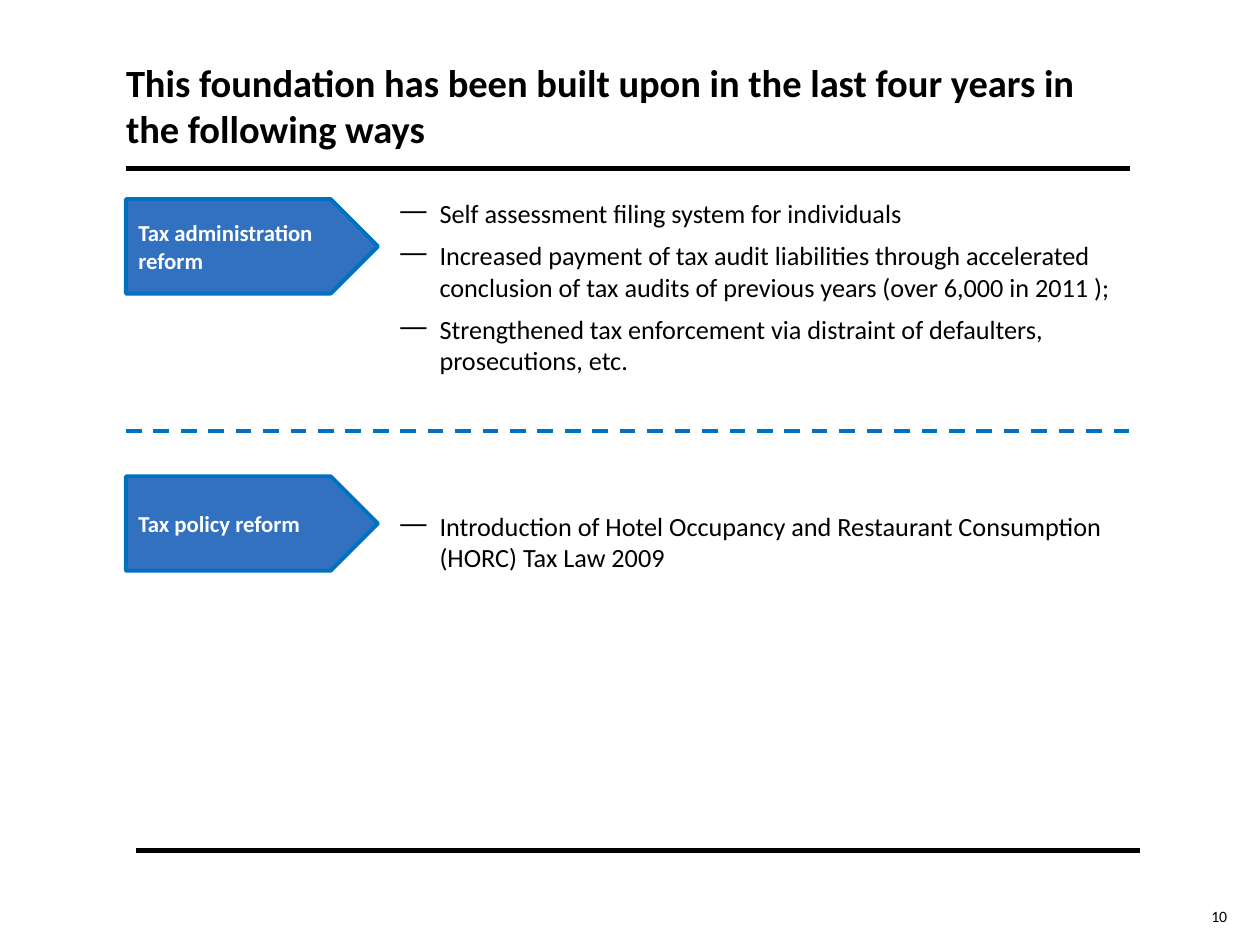
from dataclasses import dataclass

from lxml.etree import SubElement
from pptx import Presentation
from pptx.dml.color import RGBColor
from pptx.enum.dml import MSO_LINE_DASH_STYLE as Dash
from pptx.enum.shapes import MSO_CONNECTOR as Connector, MSO_SHAPE as Shape
from pptx.enum.text import MSO_ANCHOR as Anchor, MSO_AUTO_SIZE as AutoSize, PP_ALIGN as Align
from pptx.oxml.ns import qn
from pptx.util import Inches, Pt


@dataclass(frozen=True)
class Theme:
    font: str = "Calibri"
    ink: str = "000000"
    paper: str = "FFFFFF"
    tag_fill: str = "3270C0"
    accent: str = "0070C0"
    title_size: float = 22
    body_size: float = 15
    tag_size: float = 13
    number_size: float = 9
    rule_width: float = 3
    accent_width: float = 2.25


THEME = Theme()
TITLE = "This foundation has been built upon in the last four years in the following ways"
PAGE_NUMBER = "10"

# label, tag top, points top, points height, points
REFORMS = [
    ("Tax administration reform", 1.58, 1.52, 1.53, [
        "Self assessment filing system for individuals",
        "Increased payment of tax audit liabilities through accelerated "
        "conclusion of tax audits of previous years (over 6,000 in 2011 );",
        "Strengthened tax enforcement via distraint of defaulters, prosecutions, etc.",
    ]),
    ("Tax policy reform", 3.78, 4, 0.61, [
        "Introduction of Hotel Occupancy and Restaurant Consumption (HORC) Tax Law 2009",
    ]),
]

SLIDE_W, SLIDE_H = 10, 7.5
LEFT, CONTENT_W = 1, 7.97
TAG_W, TAG_H = 2, 0.75
POINTS_LEFT, POINTS_W = 2.83, 6.25
POINT_INDENT, DASH_HANG = 0.56, 0.31

# left, top, length, colour, width, dash
RULES = [
    (LEFT, 1.34, CONTENT_W, THEME.ink, THEME.rule_width, None),
    (LEFT + 0.08, 6.75, CONTENT_W, THEME.ink, THEME.rule_width, None),
    (LEFT, 3.42, 8, THEME.accent, THEME.accent_width, Dash.DASH),
]


def color(code):
    return RGBColor.from_string(code)


def box(*lengths):
    return [Inches(length) for length in lengths]


def write(paragraph, text, size, ink=THEME.ink, bold=False, align=Align.LEFT):
    paragraph.alignment = align
    run = paragraph.add_run()
    run.text = text
    run.font.name = THEME.font
    run.font.size = Pt(size)
    run.font.bold = bold
    run.font.color.rgb = color(ink)


def clear_margins(frame):
    frame.margin_left = frame.margin_right = frame.margin_top = frame.margin_bottom = 0


def add_title(slide):
    title = slide.shapes.title
    title.left, title.top, title.width, title.height = box(LEFT, 0.25, CONTENT_W, 0.95)
    frame = title.text_frame
    clear_margins(frame)
    frame.auto_size = AutoSize.NONE
    frame.vertical_anchor = Anchor.BOTTOM
    write(frame.paragraphs[0], TITLE, THEME.title_size, bold=True)


def add_rule(slide, left, top, length, ink, width, dash):
    rule = slide.shapes.add_connector(
        Connector.STRAIGHT, *box(left, top, left + length, top))
    rule.line.color.rgb = color(ink)
    rule.line.width = Pt(width)
    if dash:
        rule.line.dash_style = dash
    SubElement(rule._element.spPr, qn("a:effectLst"))


def add_tag(slide, label, top):
    tag = slide.shapes.add_shape(Shape.PENTAGON, *box(LEFT, top, TAG_W, TAG_H))
    tag.shadow.inherit = False
    tag.fill.solid()
    tag.fill.fore_color.rgb = color(THEME.tag_fill)
    tag.line.color.rgb = color(THEME.accent)
    tag.line.width = Pt(THEME.accent_width)
    frame = tag.text_frame
    frame.word_wrap = True
    frame.vertical_anchor = Anchor.MIDDLE
    write(frame.paragraphs[0], label, THEME.tag_size, THEME.paper, bold=True)


def hang_dash(paragraph):
    """Give the paragraph a dash bullet with a hanging indent."""
    properties = paragraph._p.get_or_add_pPr()
    properties.set("marL", str(Inches(POINT_INDENT)))
    properties.set("indent", str(-Inches(DASH_HANG)))
    SubElement(properties, qn("a:buChar"), char="—")


def add_points(slide, points, top, height):
    frame = slide.shapes.add_textbox(*box(POINTS_LEFT, top, POINTS_W, height)).text_frame
    frame.word_wrap = True
    for index, point in enumerate(points):
        paragraph = frame.add_paragraph() if index else frame.paragraphs[0]
        hang_dash(paragraph)
        if index:
            paragraph.space_before = Pt(3)
        paragraph.space_after = Pt(3)
        write(paragraph, point, THEME.body_size)


def add_page_number(slide):
    frame = slide.shapes.add_textbox(*box(9.59, 7.2, 0.15, 0.15)).text_frame
    clear_margins(frame)
    frame.word_wrap = False
    frame.vertical_anchor = Anchor.BOTTOM
    write(frame.paragraphs[0], PAGE_NUMBER, THEME.number_size, align=Align.RIGHT)


def main():
    deck = Presentation()
    deck.slide_width, deck.slide_height = box(SLIDE_W, SLIDE_H)
    title_only = deck.slide_layouts[5]
    slide = deck.slides.add_slide(title_only)
    add_title(slide)
    for rule in RULES:
        add_rule(slide, *rule)
    for label, tag_top, points_top, points_height, points in REFORMS:
        add_tag(slide, label, tag_top)
        add_points(slide, points, points_top, points_height)
    add_page_number(slide)
    deck.save("out.pptx")


if __name__ == "__main__":
    main()
